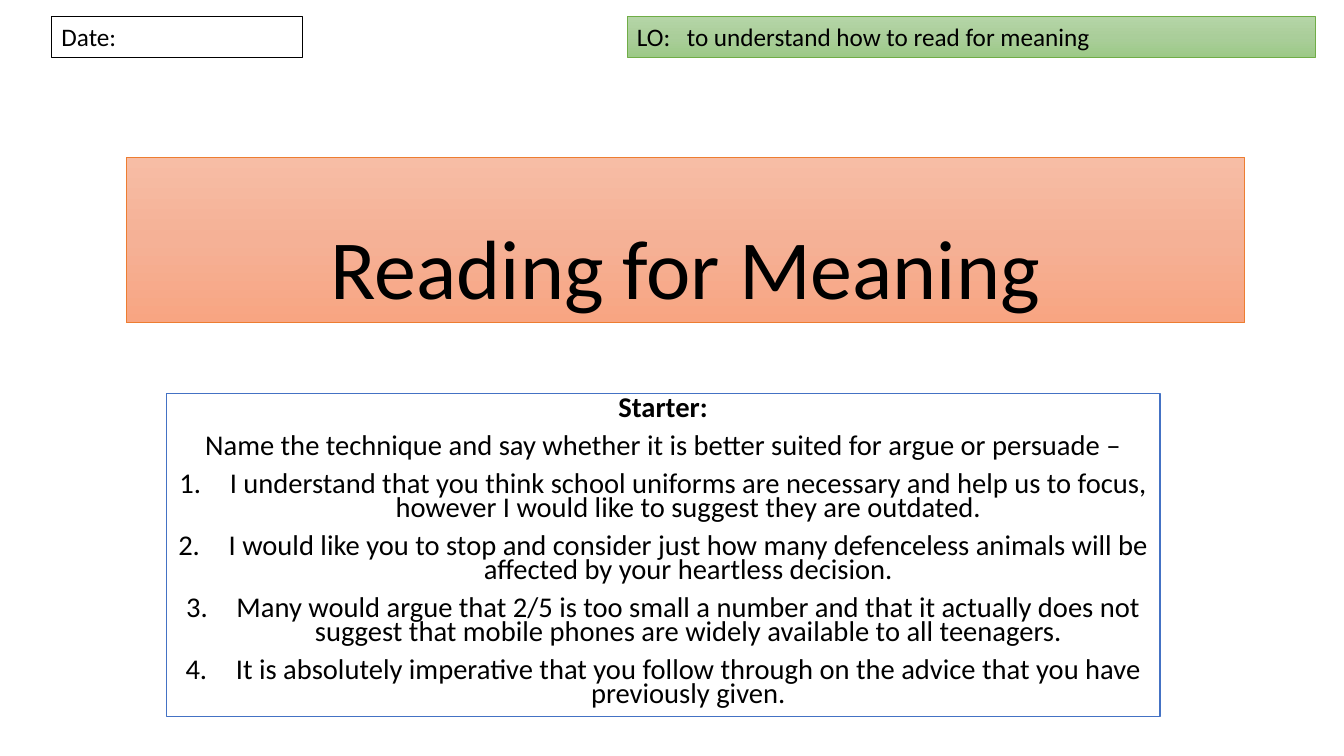
from copy import deepcopy
from lxml import etree
from pptx import Presentation
from pptx import util as u
from pptx.dml.color import RGBColor
from pptx.enum import text
from pptx.oxml import ns

HUES = {
    "ink": "000000", "paper": "FFFFFF", "blue": "4472C4",
    "orange": "ED7D31", "green": "70AD47",
}
PEACH = ("F7BDA5", "F5B196", "F8A582")
LEAF = ("B5D5A7", "AACE9A", "9CC987")
TASKS = (
    "I understand that you think school uniforms are necessary and help us to focus, however I would like to suggest they are outdated.",
    "I would like you to stop and consider just how many defenceless animals will be affected by your heartless decision.",
    "Many would argue that 2/5 is too small a number and that it actually does not suggest that mobile phones are widely available to all teenagers.",
    "It is absolutely imperative that you follow through on the advice that you have previously given.",
)


def rgb(name):
    return RGBColor.from_string(HUES[name])


def place(box, left, top, width, height):
    box.left, box.top = u.Cm(left), u.Cm(top)
    box.width, box.height = u.Cm(width), u.Cm(height)


def frame(box, line, width, shades=None):
    box.line.color.rgb = rgb(line)
    box.line.width = u.Pt(width)
    if shades:
        blend(box, shades)
    else:
        box.fill.solid()
        box.fill.fore_color.rgb = rgb("paper")
    box.text_frame.word_wrap = True
    box.text_frame.auto_size = text.MSO_AUTO_SIZE.NONE


def blend(box, shades):
    box.fill.gradient()
    box.fill.gradient_angle = 270
    stops = box._element.spPr.find(".//" + ns.qn("a:gsLst"))
    stops.insert(1, deepcopy(stops[0]))
    for i, (stop, shade) in enumerate(zip(box.fill.gradient_stops, shades)):
        stop.position = i / 2
        stop.color.rgb = RGBColor.from_string(shade)


def style(para, size, bold=False):
    font = para.font
    font.name, font.size, font.bold = "Calibri", u.Pt(size), bold
    font.color.rgb = rgb("ink")


def number(para):
    props = para._p.get_or_add_pPr()
    props.set("marL", str(u.Cm(1.27)))
    props.set("indent", str(-u.Cm(1.27)))
    etree.SubElement(props, ns.qn("a:buAutoNum"), type="arabicPeriod")


def tab(para, pos):
    props = para._p.get_or_add_pPr()
    tabs = etree.SubElement(props, ns.qn("a:tabLst"))
    etree.SubElement(tabs, ns.qn("a:tab"), pos=str(u.Cm(pos)), algn="l")


def title(box):
    place(box, 3.18, 3.96, 28.19, 4.17)
    frame(box, "orange", 0.5, PEACH)
    box.text_frame.vertical_anchor = text.MSO_ANCHOR.BOTTOM
    para = box.text_frame.paragraphs[0]
    para.text = "Reading for Meaning"
    para.alignment = text.PP_ALIGN.CENTER
    para.line_spacing = 0.9
    style(para, 60)


def starter(box):
    place(box, 4.19, 9.91, 25.04, 8.15)
    frame(box, "blue", 1)
    body = box.text_frame
    body.vertical_anchor = text.MSO_ANCHOR.TOP
    lines = ("Starter:", "Name the technique and say whether it is better suited for argue or persuade –") + TASKS
    for i, line in enumerate(lines):
        para = body.add_paragraph() if i else body.paragraphs[0]
        para.text = line
        if line in TASKS:
            number(para)
        para.alignment = text.PP_ALIGN.CENTER
        para.line_spacing = 0.7
        para.space_before = u.Pt(10 if i else 0)
        style(para, 20.4, bold=not i)


def label(slide, words, left, width, line, weight, shades=None):
    box = slide.shapes.add_textbox(u.Cm(left), u.Cm(0.42), u.Cm(width), u.Cm(1.03))
    frame(box, line, weight, shades)
    para = box.text_frame.paragraphs[0]
    para.text = words
    if "\t" in words:
        tab(para, 1.26)
    style(para, 18)


def main():
    deck = Presentation()
    deck.slide_width, deck.slide_height = u.Cm(33.87), u.Cm(19.05)
    slide = deck.slides.add_slide(deck.slide_layouts[0])
    title(slide.shapes.title)
    starter(slide.placeholders[1])
    label(slide, "Date:", 1.3, 6.32, "ink", 1)
    label(slide, "LO:\tto understand how to read for meaning", 15.8, 17.35, "green", 0.5, LEAF)
    deck.save("out.pptx")


if __name__ == "__main__":
    main()
